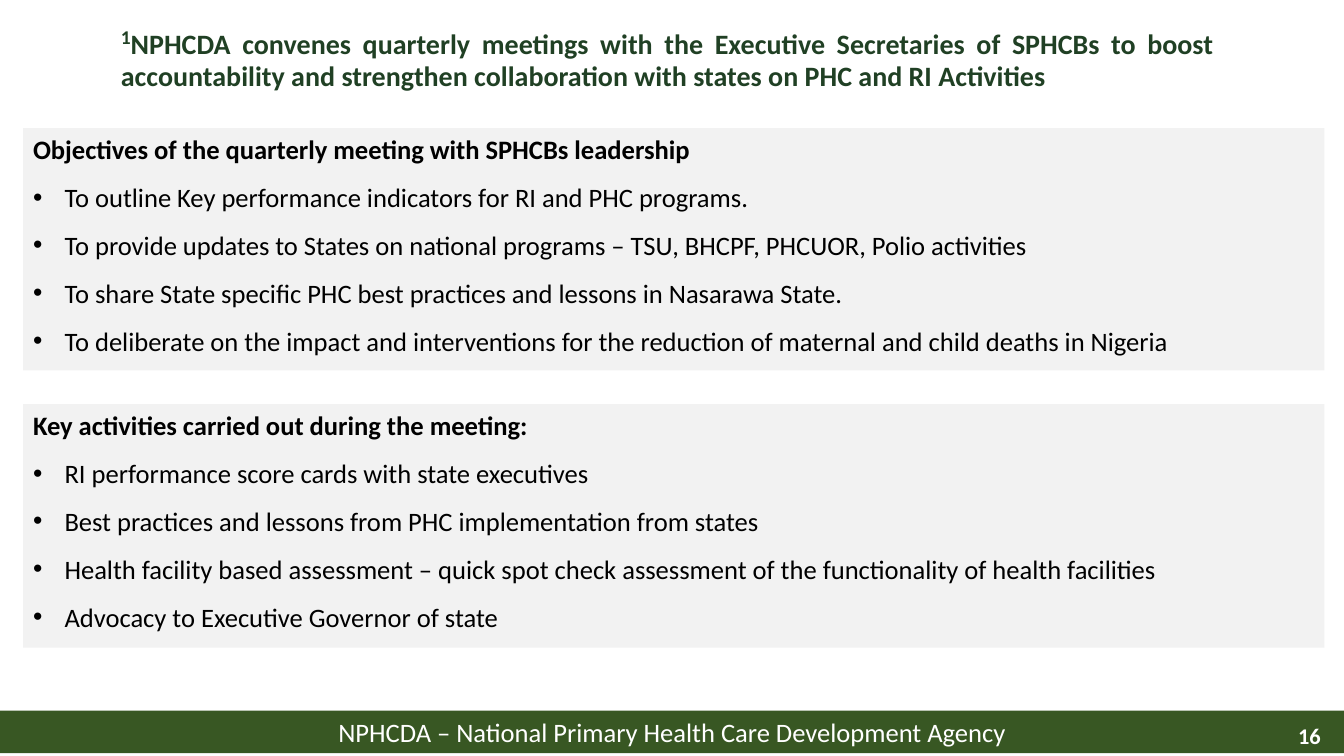
from lxml import etree
from pptx import Presentation
from pptx import util as u
from pptx.dml.color import RGBColor
from pptx.enum import shapes, text
from pptx.oxml.ns import qn

FONT = "Calibri"
WIDTH, HEIGHT = 960, 540
GREEN, DARK_GREEN, GREY = "385723", "204024", "F2F2F2"
BLACK, WHITE = "000000", "FFFFFF"
PANEL_LEFT, PANEL_WIDTH = 16.5, 929.5
INDENT = 22.5

PANELS = [
    (91.5, 173, "Objectives of the quarterly meeting with SPHCBs leadership", [
        "To outline Key performance indicators for RI and PHC programs.",
        "To provide updates to States on national programs – TSU, BHCPF, PHCUOR, Polio activities",
        "To share State specific PHC best practices and lessons in Nasarawa State.",
        "To deliberate on the impact and interventions for the reduction of maternal and child deaths in Nigeria",
    ]),
    (288.75, 174, "Key activities carried out during the meeting:", [
        "RI performance score cards with state executives",
        "Best practices and lessons from PHC implementation from states",
        "Health facility based assessment – quick spot check assessment of the functionality of health facilities",
        "Advocacy to Executive Governor of state",
    ]),
]


def color(value):
    """Turn a hex string into a colour."""
    return RGBColor.from_string(value)


def style(font, size, fill, bold=False):
    """Set the face, size, colour and weight of a font."""
    font.name, font.size, font.bold = FONT, u.Pt(size), bold
    font.color.rgb = color(fill)


def add_bar(slide, box, fill):
    """Add a plain filled rectangle and return its text frame."""
    shape = slide.shapes.add_shape(shapes.MSO_SHAPE.RECTANGLE, *map(u.Pt, box))
    shape.shadow.inherit = False
    shape.fill.solid()
    shape.fill.fore_color.rgb = color(fill)
    shape.line.fill.background()
    frame = shape.text_frame
    frame.word_wrap = True
    frame.vertical_anchor = text.MSO_ANCHOR.TOP
    return frame


def add_label(slide, box):
    """Add a wrapping, vertically centred text box and return its frame."""
    frame = slide.shapes.add_textbox(*map(u.Pt, box)).text_frame
    frame.word_wrap = True
    frame.vertical_anchor = text.MSO_ANCHOR.MIDDLE
    return frame


def add_bullet(paragraph):
    """Give a paragraph a round bullet with a hanging indent."""
    properties = paragraph._p.get_or_add_pPr()
    properties.set("marL", str(u.Pt(INDENT)))
    properties.set("indent", str(-u.Pt(INDENT)))
    etree.SubElement(properties, qn("a:buFont")).set("typeface", "Arial")
    etree.SubElement(properties, qn("a:buChar")).set("char", "•")


def add_title(slide, box):
    """Add the justified title with its raised reference number."""
    paragraph = add_label(slide, box).paragraphs[0]
    paragraph.alignment = text.PP_ALIGN.JUSTIFY
    paragraph.line_spacing = 0.9
    number = paragraph.add_run()
    number.text = "1"
    style(number.font, 24, DARK_GREEN, True)
    number._r.get_or_add_rPr().set("baseline", "30000")
    title = paragraph.add_run()
    title.text = ("NPHCDA convenes quarterly meetings with the Executive Secretaries of SPHCBs "
                  "to boost accountability and strengthen collaboration with states on PHC and RI Activities")
    style(title.font, 20, DARK_GREEN, True)


def add_panel(slide, box, heading, items):
    """Add a grey panel with a bold heading and a bulleted list."""
    frame = add_bar(slide, box, GREY)
    first = frame.paragraphs[0]
    first.text = heading
    first.alignment = text.PP_ALIGN.LEFT
    style(first.font, 19, BLACK, True)
    for item in items:
        paragraph = frame.add_paragraph()
        paragraph.text = item
        paragraph.alignment = text.PP_ALIGN.LEFT
        paragraph.line_spacing = 1.5
        add_bullet(paragraph)
        style(paragraph.font, 19, BLACK)


def add_footer(slide, box):
    """Add the green footer band with the agency name and page number."""
    left, top, width, height = box
    agency = add_bar(slide, box, GREEN).paragraphs[0]
    agency.text = "NPHCDA – National Primary Health Care Development Agency"
    agency.alignment = text.PP_ALIGN.CENTER
    style(agency.font, 19, WHITE)
    number_box = (left + width - 225.5, top + 3.5, 216, 29)
    number = add_label(slide, number_box).paragraphs[0]
    number.text = "16"
    number.alignment = text.PP_ALIGN.RIGHT
    style(number.font, 16, WHITE, True)


def main():
    """Build the slide and save it."""
    presentation = Presentation()
    presentation.slide_width, presentation.slide_height = u.Pt(WIDTH), u.Pt(HEIGHT)
    slide = presentation.slides.add_slide(presentation.slide_layouts[6])
    add_footer(slide, (0, 507.6, WIDTH, 30.4))
    add_title(slide, (79.25, 16.5, 795, 51))
    for top, height, heading, items in PANELS:
        add_panel(slide, (PANEL_LEFT, top, PANEL_WIDTH, height), heading, items)
    presentation.save("out.pptx")


if __name__ == "__main__":
    main()
